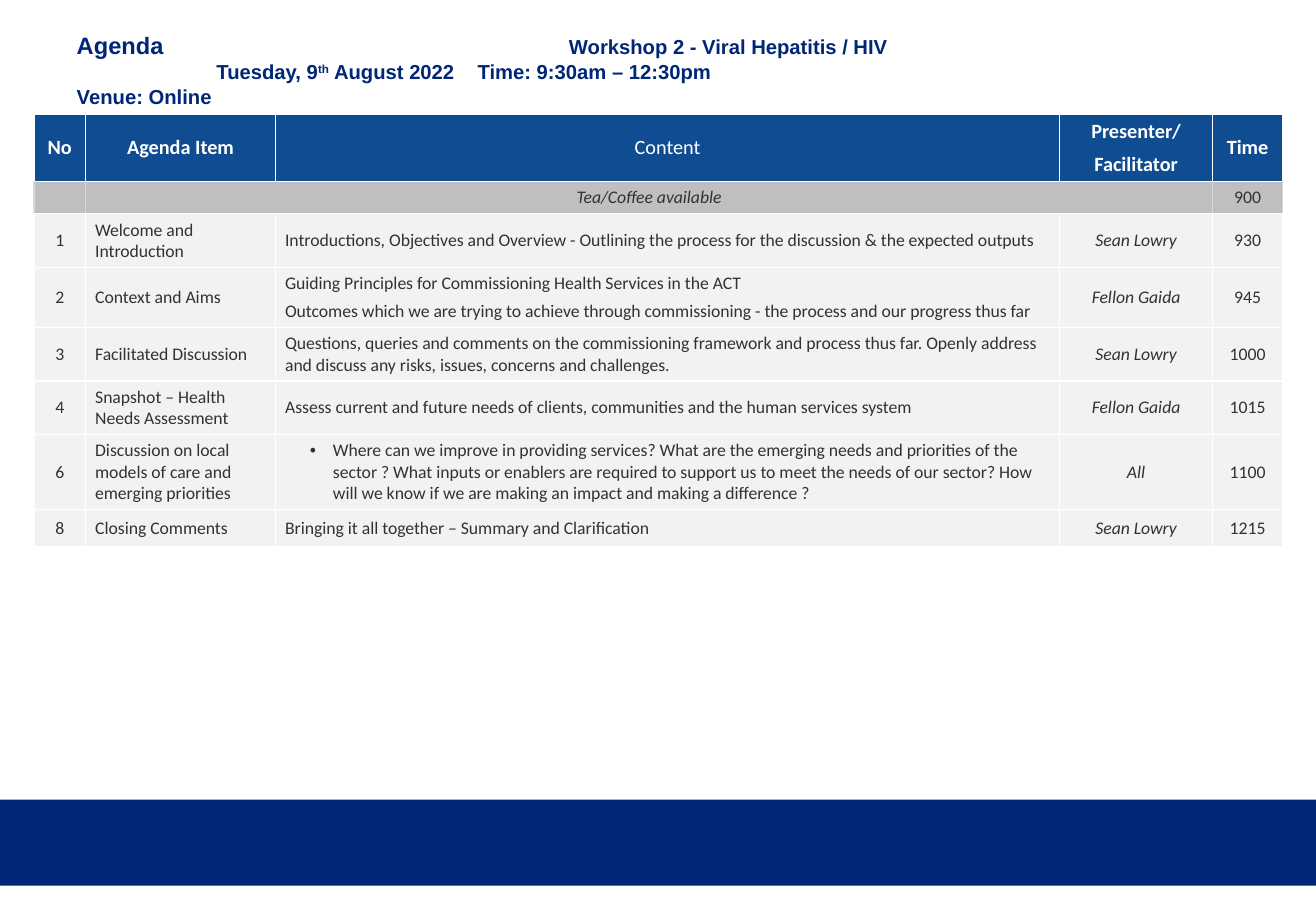
from dataclasses import dataclass

import pptx
import pptx.dml.color
import pptx.enum.shapes
import pptx.enum.text
import pptx.oxml
import pptx.oxml.ns
import pptx.util
from pptx.util import Cm, Pt

ALIGN = pptx.enum.text.PP_ALIGN
MIDDLE = pptx.enum.text.MSO_ANCHOR.MIDDLE
NS = pptx.oxml.ns.nsdecls("a")


@dataclass(frozen=True)
class Theme:
    navy: str = "002677"
    header: str = "104C92"
    pause: str = "BFBFBF"
    pause_rule: str = "D9D9D9"
    row: str = "F2F2F2"
    white: str = "FFFFFF"
    text: str = "323232"
    title_font: str = "Arial"
    table_font: str = "Calibri"
    lead_size: float = 14
    title_size: float = 12
    header_size: float = 12
    body_size: float = 10.5


THEME = Theme()

# Each title line: its tab stops in cm, then its spans as (text, size, superscript).
TITLE_LINES = [
    ([10.29], [("Agenda\t", THEME.lead_size, False),
               ("Workshop 2 - Viral Hepatitis / HIV", THEME.title_size, False)]),
    ([2.92, 8.38], [("\tTuesday, 9", THEME.title_size, False),
                    ("th", THEME.title_size, True),
                    (" August 2022\tTime: 9:30am – 12:30pm", THEME.title_size, False)]),
    ([], [("Venue: Online", THEME.title_size, False)]),
]

COLUMN_WIDTHS = [1.08, 3.97, 16.39, 3.2, 1.46]
ROW_HEIGHTS = [1.41, 0.67, 1.13, 1.25, 1.12, 1.12, 1.57, 0.78]
HEADINGS = ["No", "Agenda Item", "Content", "Presenter/\nFacilitator", "Time"]
PAUSE = ["", "Tea/Coffee available", None, None, "900"]
AGENDA = [
    ["1", "Welcome and Introduction",
     "Introductions, Objectives and Overview - Outlining the process for the discussion "
     "& the expected outputs", "Sean Lowry", "930"],
    ["2", "Context and Aims",
     "Guiding Principles for Commissioning Health Services in the ACT\n"
     "Outcomes which we are trying to achieve through commissioning - the process and "
     "our progress thus far", "Fellon Gaida", "945"],
    ["3", "Facilitated Discussion",
     "Questions, queries and comments on the commissioning framework and process thus far. "
     "Openly address and discuss any risks, issues, concerns and challenges.",
     "Sean Lowry", "1000"],
    ["4", "Snapshot – Health Needs Assessment",
     "Assess current and future needs of clients, communities and the human services system",
     "Fellon Gaida", "1015"],
    ["6", "Discussion on local models of care and emerging priorities",
     "• Where can we improve in providing services? What are the emerging needs and "
     "priorities of the sector ? What inputs or enablers are required to support us to meet "
     "the needs of our sector? How will we know if we are making an impact and making a "
     "difference ?", "All", "1100"],
    ["8", "Closing Comments", "Bringing it all together – Summary and Clarification",
     "Sean Lowry", "1215"],
]


def rgb(value):
    return pptx.dml.color.RGBColor.from_string(value)


def add_span(para, text, font, size, color, bold=False, italic=False):
    span = para.add_run()
    span.text = text
    span.font.name = font
    span.font.size = Pt(size)
    span.font.color.rgb = rgb(color)
    span.font.bold = bold
    span.font.italic = italic
    return span


def add_tab_stops(para, stops):
    tabs = "".join(f'<a:tab pos="{Cm(stop)}" algn="l"/>' for stop in stops)
    para._p.get_or_add_pPr().append(
        pptx.oxml.parse_xml(f"<a:tabLst {NS}>{tabs}</a:tabLst>"))


def add_bullet(para):
    properties = para._p.get_or_add_pPr()
    properties.set("marL", str(Cm(1)))
    properties.set("indent", str(-Cm(0.48)))
    properties.append(pptx.oxml.parse_xml(f'<a:buFont {NS} typeface="Arial"/>'))
    properties.append(pptx.oxml.parse_xml(f'<a:buChar {NS} char="•"/>'))


def set_borders(cell, side_color):
    sides = {"L": side_color, "R": side_color, "T": THEME.white, "B": THEME.white}
    for side, color in sides.items():
        cell._tc.get_or_add_tcPr().append(pptx.oxml.parse_xml(
            f'<a:ln{side} {NS} w="{Pt(1)}"><a:solidFill><a:srgbClr val="{color}"/>'
            f"</a:solidFill></a:ln{side}>"))


def place_title(page, left, top, width, height):
    box = page.shapes.title
    box.left, box.top, box.width, box.height = left, top, width, height
    frame = box.text_frame
    frame.word_wrap = True
    frame.auto_size = pptx.enum.text.MSO_AUTO_SIZE.NONE
    frame.vertical_anchor = pptx.enum.text.MSO_ANCHOR.TOP
    frame.margin_top = Cm(0.18)
    frame.margin_bottom = 0
    for index, (stops, spans) in enumerate(TITLE_LINES):
        para = frame.add_paragraph() if index else frame.paragraphs[0]
        if stops:
            add_tab_stops(para, stops)
        para.alignment = ALIGN.LEFT
        para.line_spacing = Pt(14.8)
        para.space_before = Pt(0)
        for text, size, raised in spans:
            span = add_span(para, text, THEME.title_font, size, THEME.navy, bold=True)
            if raised:
                span._r.get_or_add_rPr().set("baseline", "30000")


def fill_cell(cell, text, fill, side_color, align, gap, **style):
    set_borders(cell, side_color)
    cell.fill.solid()
    cell.fill.fore_color.rgb = rgb(fill)
    cell.vertical_anchor = MIDDLE
    cell.margin_left = cell.margin_right = Cm(0.2)
    cell.margin_top = cell.margin_bottom = Cm(0.1)
    for index, line in enumerate((text or "").split("\n")):
        para = cell.text_frame.add_paragraph() if index else cell.text_frame.paragraphs[0]
        if line.startswith("• "):
            add_bullet(para)
            line = line[2:]
        para.alignment = align
        if index:
            para.space_before = Pt(gap)
        if line:
            add_span(para, line, THEME.table_font, **style)
        else:
            para._p.append(pptx.oxml.parse_xml(
                f'<a:endParaRPr {NS} sz="{int(THEME.body_size * 100)}"/>'))


def place_agenda(page, left, top):
    rows = [HEADINGS, PAUSE] + AGENDA
    table = page.shapes.add_table(
        len(rows), len(COLUMN_WIDTHS), left, top,
        Cm(sum(COLUMN_WIDTHS)), Cm(sum(ROW_HEIGHTS))).table
    table.first_row = table.horz_banding = False
    for column, width in zip(table.columns, COLUMN_WIDTHS):
        column.width = Cm(width)
    for row, height in zip(table.rows, ROW_HEIGHTS):
        row.height = Cm(height)
    table.cell(1, 1).merge(table.cell(1, 3))

    for number, texts in enumerate(rows):
        for column, text in enumerate(texts):
            cell = table.cell(number, column)
            if number == 0:
                fill_cell(cell, text, THEME.header, THEME.white, ALIGN.CENTER, 5,
                          size=THEME.header_size, color=THEME.white,
                          bold=text != "Content")
            elif number == 1:
                fill_cell(cell, text, THEME.pause, THEME.pause_rule, ALIGN.CENTER, 4,
                          size=THEME.body_size, color=THEME.text, italic=column == 1)
            else:
                align = ALIGN.LEFT if column in (1, 2) else ALIGN.CENTER
                fill_cell(cell, text, THEME.row, THEME.white, align, 4,
                          size=THEME.body_size, color=THEME.text, italic=column == 3)


def place_footer_band(page, left, top, width, height):
    band = page.shapes.add_shape(
        pptx.enum.shapes.MSO_SHAPE.RECTANGLE, left, top, width, height)
    band.shadow.inherit = False
    band.fill.solid()
    band.fill.fore_color.rgb = rgb(THEME.navy)
    band.line.fill.background()


def main():
    deck = pptx.Presentation()
    deck.slide_width, deck.slide_height = Cm(27.51), Cm(19.05)
    page = deck.slides.add_slide(deck.slide_layouts[5])
    place_footer_band(page, 0, Cm(16.72), deck.slide_width, Cm(1.8))
    place_title(page, Cm(1.35), Cm(0.53), Cm(24), Cm(1.78))
    place_agenda(page, Cm(0.71), Cm(2.39))
    deck.save("out.pptx")


if __name__ == "__main__":
    main()
